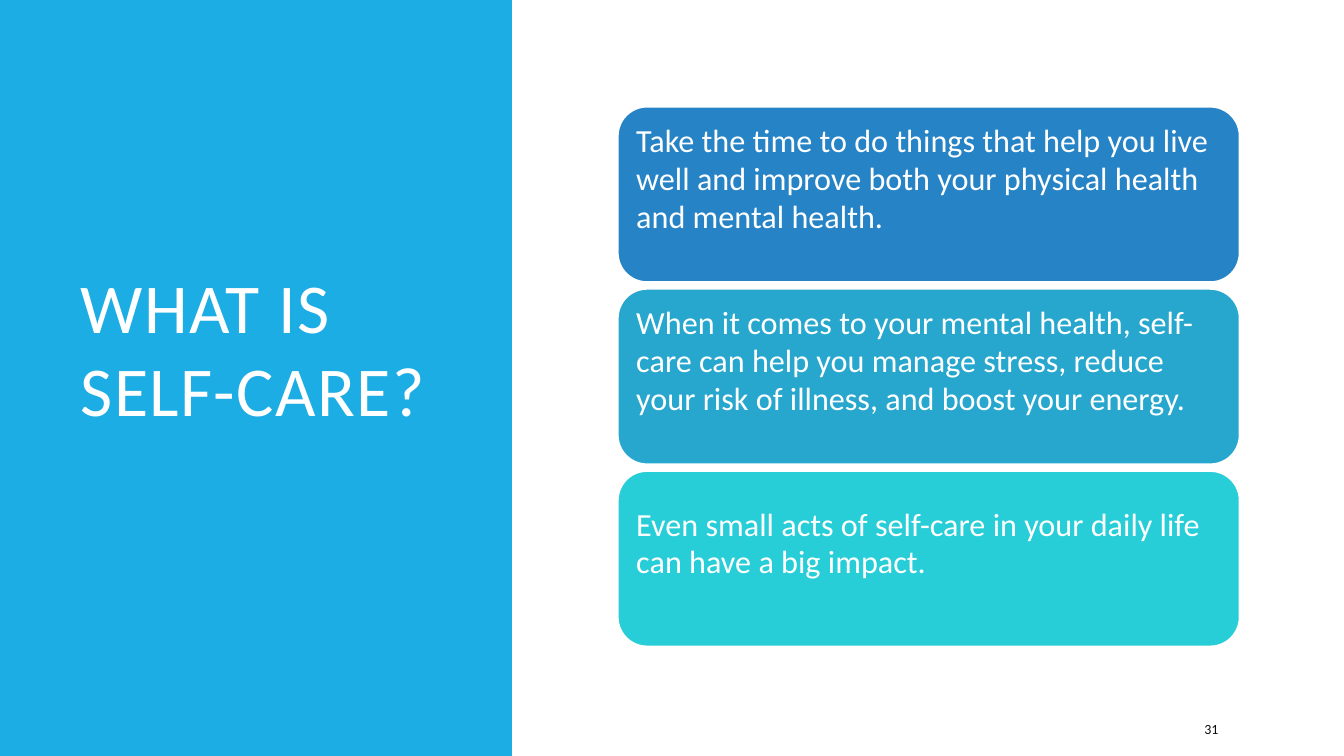
from pptx import Presentation
from pptx.dml.color import RGBColor
from pptx.enum.shapes import MSO_SHAPE
from pptx.enum.text import MSO_ANCHOR, MSO_AUTO_SIZE, PP_ALIGN
from pptx.util import Cm, Pt

WIDTH, HEIGHT = 33.87, 19.05
CARDS = [
    ("2683C6", "Take the time to do things that help you live well and "
               "improve both your physical health and mental health."),
    ("27A7CE", "When it comes to your mental health, self-care can help you "
               "manage stress, reduce your risk of illness, and boost your energy."),
    ("27CED7", "Even small acts of self-care in your daily life "
               "can have a big impact."),
]


def rgb(value):
    return RGBColor.from_string(value)


class SlideBuilder:
    font = "Calibri"
    white = "FFFFFF"
    ink = "0D0D0D"
    accent = "1CADE4"

    def __init__(self, s):
        self.s = s

    def set_text(self, sp, text, size, color, margins, spacing=1.0):
        tf = sp.text_frame
        tf.word_wrap = True
        tf.auto_size = MSO_AUTO_SIZE.NONE
        tf.vertical_anchor = MSO_ANCHOR.MIDDLE
        tf.margin_left, tf.margin_top, tf.margin_right, tf.margin_bottom = map(Cm, margins)
        p = tf.paragraphs[0]
        p.alignment = PP_ALIGN.LEFT
        p.line_spacing = spacing
        r = p.add_run()
        r.text = text
        r.font.name = self.font
        r.font.size = Pt(size)
        r.font.color.rgb = rgb(color)
        return r

    def block(self, kind, box, fill, line=None):
        sp = self.s.shapes.add_shape(kind, *map(Cm, box))
        sp.shadow.inherit = False
        sp.fill.solid()
        sp.fill.fore_color.rgb = rgb(fill)
        if line:
            sp.line.color.rgb = rgb(line)
            sp.line.width = Pt(1.25)
        else:
            sp.line.fill.background()
        return sp

    def panel(self, box):
        sp = self.block(MSO_SHAPE.RECTANGLE, box, self.accent)
        self.s.shapes.title.element.addprevious(sp.element)

    def title(self, text, box):
        sp = self.s.shapes.title
        sp.left, sp.top, sp.width, sp.height = map(Cm, box)
        r = self.set_text(sp, text, 50, self.white, (0.25, 0.13, 0.25, 1.5), 0.98)
        r.font._element.set("spc", "100")

    def card(self, text, box, fill):
        sp = self.block(MSO_SHAPE.ROUNDED_RECTANGLE, box, fill, self.white)
        self.set_text(sp, text, 23, self.white, (0.25, 0, 0.25, 0.76), 0.98)

    def label(self, text, box):
        sp = self.s.shapes.add_textbox(*map(Cm, box))
        self.set_text(sp, text, 10, self.ink, (0.25, 0.13, 0.25, 0.13))


def main():
    prs = Presentation()
    prs.slide_width, prs.slide_height = Cm(WIDTH), Cm(HEIGHT)
    slide = SlideBuilder(prs.slides.add_slide(prs.slide_layouts[5]))
    slide.panel((0, 0, 12.9, HEIGHT))
    slide.title("WHAT IS SELF-CARE?", (1.78, 1.78, 9.5, 15.47))
    for i, (fill, text) in enumerate(CARDS):
        slide.card(text, (15.57, 2.69 + i * 4.59, 15.67, 4.42), fill)
    slide.label("31", (30.1, 17.98, 2.69, 0.76))
    prs.save("out.pptx")


if __name__ == "__main__":
    main()
